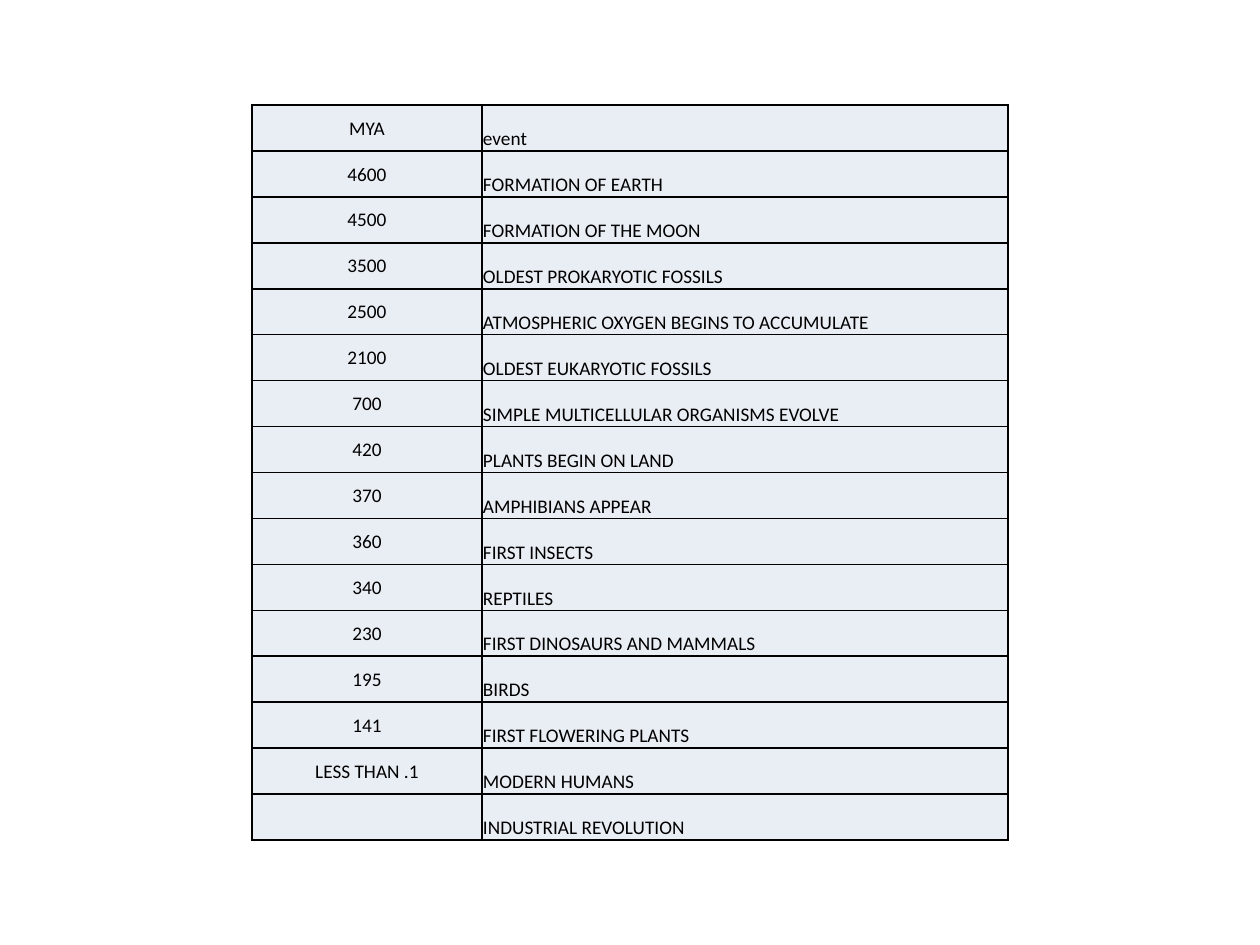
from dataclasses import dataclass
from lxml.etree import SubElement as Sub
from pptx import Presentation
from pptx.dml.color import RGBColor as RGB
from pptx.enum.text import MSO_ANCHOR as Anchor, PP_ALIGN as Align
from pptx.oxml.ns import qn
from pptx.util import Emu, Pt


@dataclass(frozen=True)
class Theme:
    ink: str = "000000"
    cell: str = "E9EDF4"
    font: str = "Calibri"
    size: int = 11
    rule: int = 1


THEME = Theme()
BOX = (252, 105, 756, 735)
DATE_W = 230
ROWS = [
    ("MYA", "event"),
    ("4600", "FORMATION OF EARTH"),
    ("4500", "FORMATION OF THE MOON"),
    ("3500", "OLDEST PROKARYOTIC FOSSILS"),
    ("2500", "ATMOSPHERIC OXYGEN BEGINS TO ACCUMULATE"),
    ("2100", "OLDEST EUKARYOTIC FOSSILS"),
    ("700", "SIMPLE MULTICELLULAR ORGANISMS EVOLVE"),
    ("420", "PLANTS BEGIN ON LAND"),
    ("370", "AMPHIBIANS APPEAR"),
    ("360", "FIRST INSECTS"),
    ("340", "REPTILES"),
    ("230", "FIRST DINOSAURS AND MAMMALS"),
    ("195", "BIRDS"),
    ("141", "FIRST FLOWERING PLANTS"),
    ("LESS THAN .1", "MODERN HUMANS"),
    ("", "INDUSTRIAL REVOLUTION"),
]


def px(n):
    return Emu(round(n * 914400 / 126))


def write(cell, text, align=Align.LEFT, anchor=Anchor.BOTTOM):
    cell.vertical_anchor = anchor
    cell.margin_left = cell.margin_right = cell.margin_top = px(1)
    cell.margin_bottom = 0
    if not text:
        return
    para = cell.text_frame.paragraphs[0]
    para.alignment = align
    run = para.add_run()
    run.text = text
    run.font.name = THEME.font
    run.font.size = Pt(THEME.size)
    run.font.color.rgb = RGB.from_string(THEME.ink)


def frame(cell):
    """Rule all four sides; the lines must precede the fill in the XML."""
    props = cell._tc.get_or_add_tcPr()
    for i, side in enumerate("LRTB"):
        line = Sub(props, qn(f"a:ln{side}"), w=str(Pt(THEME.rule)))
        Sub(Sub(line, qn("a:solidFill")), qn("a:srgbClr"), val=THEME.ink)
        props.insert(i, line)


def add_dates(slide, box):
    left, top, width, height = box
    table = slide.shapes.add_table(len(ROWS), 2, *map(px, box)).table
    table.first_row = table.horz_banding = False
    for col, wide in zip(table.columns, (DATE_W, width - DATE_W)):
        col.width = px(wide)
    for row, (date, event) in zip(table.rows, ROWS):
        row.height = px(height / len(ROWS))
        write(row.cells[0], date, align=Align.CENTER, anchor=Anchor.MIDDLE)
        write(row.cells[1], event)
        for cell in row.cells:
            cell.fill.solid()
            cell.fill.fore_color.rgb = RGB.from_string(THEME.cell)
            frame(cell)


def main():
    deck = Presentation()
    deck.slide_width, deck.slide_height = px(1260), px(945)
    slide = deck.slides.add_slide(deck.slide_layouts[6])
    add_dates(slide, BOX)
    deck.save("out.pptx")


if __name__ == "__main__":
    main()
